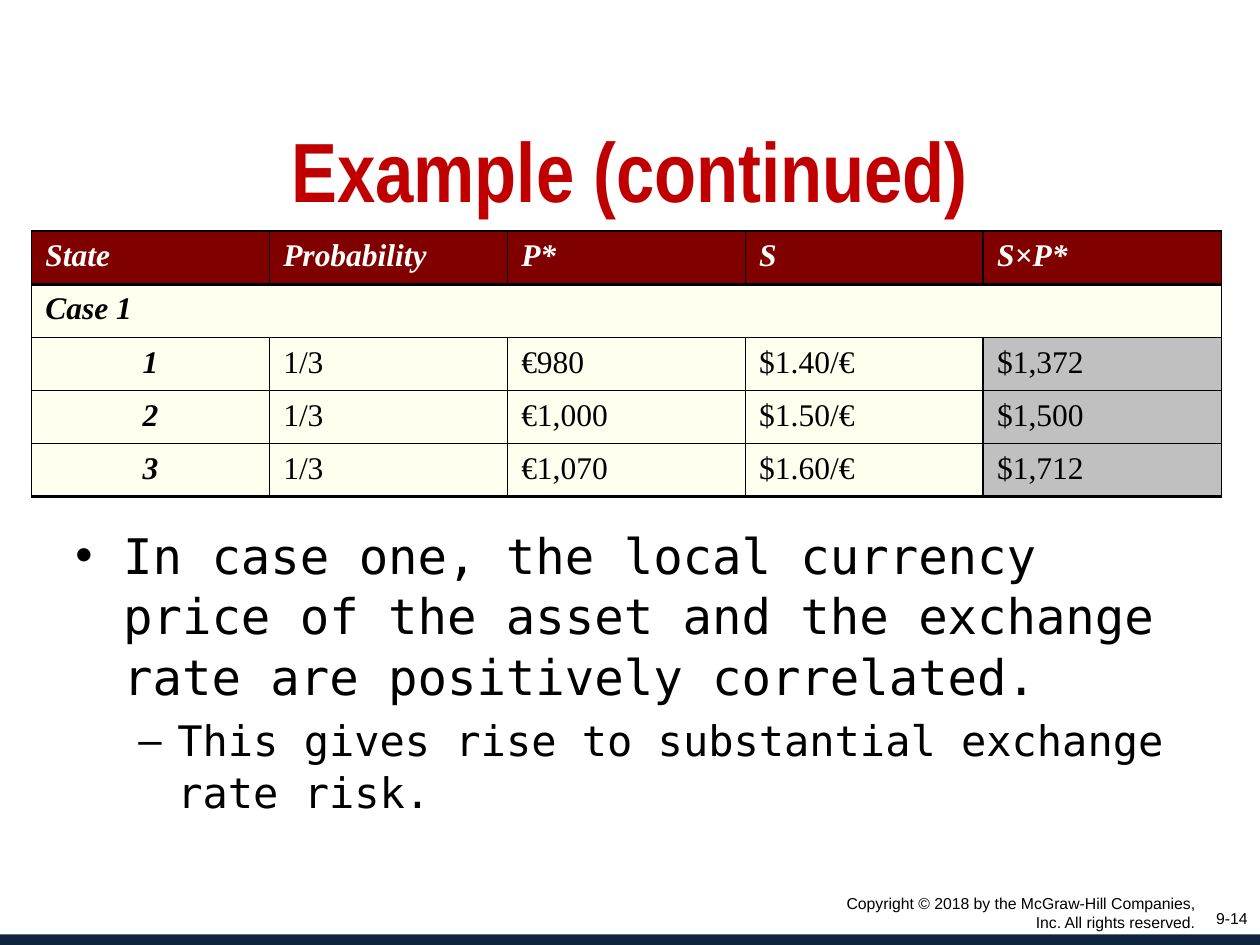
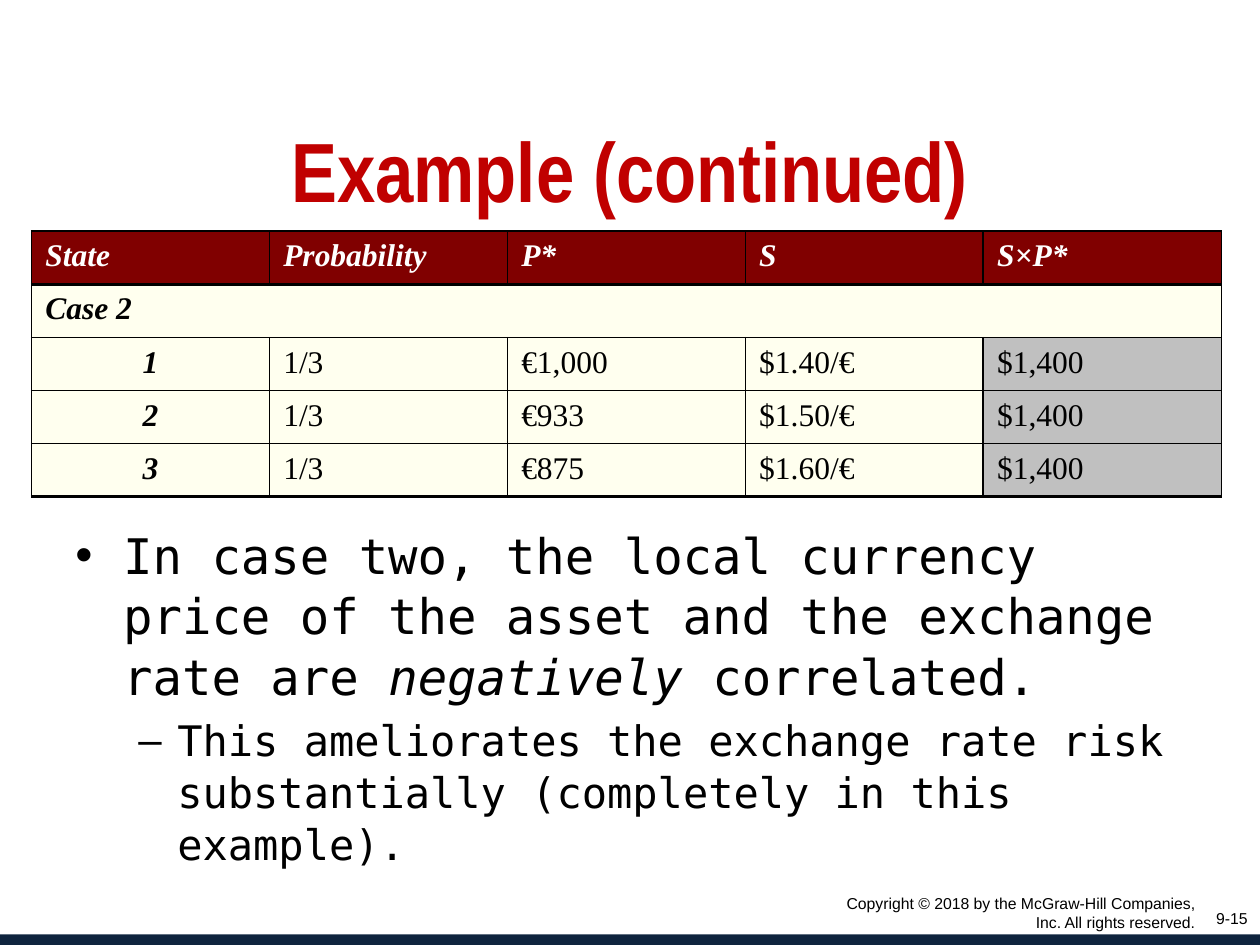
"""Build two slides on exchange rate risk, each with a table of states and notes."""
import pptx
import pptx.util
import pptx.dml.color
import pptx.enum.shapes
import pptx.enum.text
import pptx.oxml
import pptx.oxml.ns

Pt, Inches = pptx.util.Pt, pptx.util.Inches
ALIGN = pptx.enum.text.PP_ALIGN
COLS, ROWS = 120, 90
WIDE, HIGH = Inches(10), Inches(7.5)
INK = {"title": "C00000", "text": "000000", "white": "FFFFFF", "band": "0F243E",
       "head": "800000", "cell": "FFFFEF", "last": "C0C0C0"}
TITLE = {"name": "Arial Narrow", "size": Pt(48), "bold": True}
SMALL = {"name": "Arial", "size": Pt(9)}
CELL = {"name": "Times New Roman", "size": Pt(18), "bold": False, "italic": False}
STRONG = CELL | {"bold": True, "italic": True}
MONO = {"name": "DejaVu Sans Mono"}
LEVELS = [{"size": 28, "left": 0.38, "hang": 0.38, "mark": "•", "gap": 0},
          {"size": 24, "left": 0.81, "hang": 0.31, "mark": "–", "gap": 4.8}]
HEAD = ["State", "Probability", "P*", "S", "S×P*"]
RATES = ["$1.40/€", "$1.50/€", "$1.60/€"]
COPY = "Copyright © 2018 by the McGraw-Hill Companies, Inc. All rights reserved."
CASES = [
    {"name": "Case 1", "page": "9-14",
     "local": ["€980", "€1,000", "€1,070"],
     "dollar": ["$1,372", "$1,500", "$1,712"],
     "notes": [["In case one, the local currency price of the asset and the exchange "
                "rate are positively correlated."],
               ["This gives rise to substantial exchange rate risk."]]},
    {"name": "Case 2", "page": "9-15",
     "local": ["€1,000", "€933", "€875"],
     "dollar": ["$1,400", "$1,400", "$1,400"],
     "notes": [["In case two, the local currency price of the asset and the exchange "
                "rate are ", "negatively", " correlated."],
               ["This ameliorates the exchange rate risk substantially (completely in "
                "this example)."]]},
]


def put(item, form):
    """Set each attribute named in a dict of format values."""
    for key, value in form.items():
        setattr(item, key, value)


def rgb(name):
    """Return a named colour."""
    return pptx.dml.color.RGBColor.from_string(INK[name])


def place(col, row, wide, high):
    """Turn grid columns and rows into slide lengths."""
    return (int(WIDE * col / COLS), int(HIGH * row / ROWS),
            int(WIDE * wide / COLS), int(HIGH * high / ROWS))


def write(para, text, form, tint="text", align=None):
    """Add a run with its font format and colour."""
    run = para.add_run()
    run.text = text
    put(run.font, form)
    run.font.color.rgb = rgb(tint)
    if align is not None:
        para.alignment = align


def frame(slide, spot, top=0.05):
    """Add a wrapping text box and return its text frame."""
    body = slide.shapes.add_textbox(*place(*spot)).text_frame
    put(body, {"word_wrap": True, "margin_top": Inches(top)})
    return body


def label(slide, spot, text, form, tint="text", align=ALIGN.RIGHT, top=0.05):
    """Add a one-paragraph text box."""
    write(frame(slide, spot, top).paragraphs[0], text, form, tint, align)


def band(slide, spot):
    """Add the dark band at the foot."""
    bar = slide.shapes.add_shape(pptx.enum.shapes.MSO_SHAPE.RECTANGLE, *place(*spot))
    bar.shadow.inherit = False
    bar.fill.solid()
    bar.fill.fore_color.rgb = rgb("band")
    bar.line.fill.background()


def notes(slide, spot, items):
    """Add bulleted notes, one level each, with every second run in italics."""
    body = frame(slide, spot, 0.07)
    for num, (runs, level) in enumerate(zip(items, LEVELS)):
        para = body.add_paragraph() if num else body.paragraphs[0]
        put(para, {"level": num, "line_spacing": 1.03})
        if level["gap"]:
            para.space_before = Pt(level["gap"])
        props = para._p.get_or_add_pPr()
        props.set("marL", str(Inches(level["left"])))
        props.set("indent", str(-Inches(level["hang"])))
        for tag, key, value in (("buFont", "typeface", "Arial"),
                                ("buChar", "char", level["mark"])):
            mark = pptx.oxml.parse_xml(f'<a:{tag} {pptx.oxml.ns.nsdecls("a")}/>')
            mark.set(key, value)
            props.append(mark)
        for turn, text in enumerate(runs):
            write(para, text, MONO | {"size": Pt(level["size"]), "italic": turn % 2 == 1})


def edge(cell, sides):
    """Draw the cell borders from a dict of side and width."""
    props = cell._tc.get_or_add_tcPr()
    for side, width in sides.items():
        props.append(pptx.oxml.parse_xml(
            f'<a:ln{side} {pptx.oxml.ns.nsdecls("a")} w="{Pt(width)}"><a:solidFill>'
            f'<a:srgbClr val="{INK["text"]}"/></a:solidFill></a:ln{side}>'))


def grid(slide, spot, case):
    """Add the table of states with its header and case row."""
    states = [[str(num), "1/3", *row] for num, row in
              enumerate(zip(case["local"], RATES, case["dollar"]), 1)]
    rows = [HEAD, [case["name"]] + [""] * 4, *states]
    last, end = len(rows) - 1, len(HEAD) - 1
    table = slide.shapes.add_table(len(rows), len(HEAD), *place(*spot)).table
    for r, row in enumerate(rows):
        for c, text in enumerate(row):
            cell = table.cell(r, c)
            put(cell, {"margin_left": Inches(0.11), "margin_right": Inches(0.11),
                       "margin_top": Inches(0.06), "margin_bottom": Inches(0.06)})
            edge(cell, {"L": 1.25 if c == end and r != 1 else 0.75,
                        "R": 1.25 if c == end - 1 and r != 1 else 0.75,
                        "T": 2 if r == 1 else 1.25 if r == 0 else 0.75,
                        "B": 2 if r in (0, last) else 0.75})
            tone = "head" if r == 0 else "last" if c == end and r > 1 else "cell"
            cell.fill.solid()
            cell.fill.fore_color.rgb = rgb(tone)
            if text:
                write(cell.text_frame.paragraphs[0], text,
                      STRONG if r < 2 or c == 0 else CELL,
                      "text" if r else "white",
                      ALIGN.CENTER if r > 1 and c == 0 else ALIGN.LEFT)
    table.cell(1, 0).merge(table.cell(1, end))


def main():
    """Build and save both slides."""
    deck = pptx.Presentation()
    put(deck, {"slide_width": WIDE, "slide_height": HIGH})
    for case in CASES:
        slide = deck.slides.add_slide(deck.slide_layouts[6])
        band(slide, (0, 89, COLS, 1.2))
        label(slide, (6, 10, 108, 15), "Example (continued)", TITLE, "title",
              ALIGN.CENTER, 0.11)
        notes(slide, (6, 49, 108, 35.4), case["notes"])
        grid(slide, (3, 22, 113.33, 25.33), case)
        label(slide, (114, 86, 6, 4), case["page"], SMALL)
        label(slide, (77, 85, 38, 5.4), COPY, SMALL, top=0.01)
    deck.save("out.pptx")


if __name__ == "__main__":
    main()
